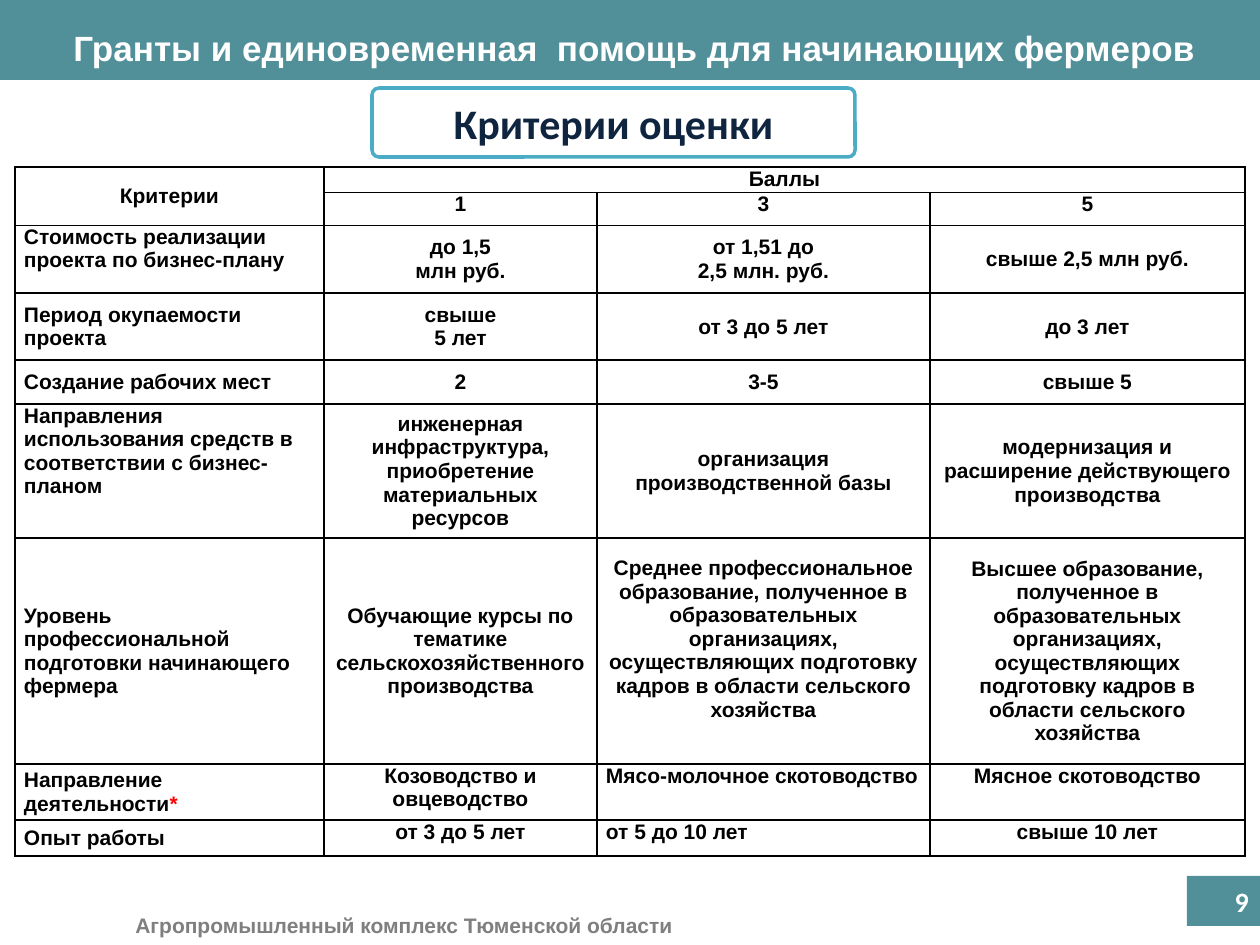
from lxml import etree
from pptx import Presentation
from pptx.dml.color import RGBColor
from pptx.enum.shapes import MSO_SHAPE as SHAPE
from pptx.enum.text import MSO_ANCHOR as ANCHOR, PP_ALIGN as ALIGN
from pptx.oxml import parse_xml
from pptx.oxml.ns import nsdecls
from pptx.util import Emu, Pt

TEAL = RGBColor(0x51, 0x90, 0x99)
AQUA = RGBColor(0x4B, 0xAC, 0xC6)
NAVY = RGBColor(0x0F, 0x24, 0x3E)
GRAY = RGBColor(0x7F, 0x7F, 0x7F)
RED = RGBColor(0xFF, 0, 0)
BLACK = RGBColor(0, 0, 0)
WHITE = RGBColor(0xFF, 0xFF, 0xFF)


def px(*values):
    return [Emu(round(v * 914400 / 126)) for v in values]


def write(p, text, size=12, font="Arial", color=BLACK, align=ALIGN.LEFT):
    p.alignment = align
    r = p.add_run()
    r.text = text
    r.font.size = Pt(size)
    r.font.name = font
    r.font.bold = True
    r.font.color.rgb = color


prs = Presentation()
prs.slide_width, prs.slide_height = px(1260, 945)
s = prs.slides.add_slide(prs.slide_layouts[6])

for box in [(0, 0, 1260, 80), (1187, 876, 73, 50)]:
    sp = s.shapes.add_shape(SHAPE.RECTANGLE, *px(*box))
    sp.shadow.inherit = False
    sp.fill.solid()
    sp.fill.fore_color.rgb = TEAL
    sp.line.fill.background()

sp = s.shapes.add_shape(SHAPE.ROUNDED_RECTANGLE, *px(372, 88, 483, 69))
sp.adjustments[0] = 0.1
sp.shadow.inherit = False
sp.fill.solid()
sp.fill.fore_color.rgb = WHITE
sp.line.color.rgb = AQUA
sp.line.width = Pt(2)
sp.text_frame.vertical_anchor = ANCHOR.MIDDLE
write(sp.text_frame.paragraphs[0], "Критерии оценки", size=24, font="Calibri",
      color=NAVY, align=ALIGN.CENTER)

labels = [
    ((39, 20, 1191, 55), "Гранты и единовременная  помощь для начинающих фермеров",
     True, ANCHOR.TOP, dict(size=20, color=WHITE, align=ALIGN.CENTER)),
    ((123, 906, 568, 38), "Агропромышленный комплекс Тюменской области",
     False, ANCHOR.TOP, dict(color=GRAY)),
    ((968, 876, 293, 50), "9",
     True, ANCHOR.MIDDLE, dict(size=16, font="Calibri", color=WHITE, align=ALIGN.RIGHT)),
]
for box, text, wrap, anchor, style in labels:
    tf = s.shapes.add_textbox(*px(*box)).text_frame
    tf.word_wrap = wrap
    tf.vertical_anchor = anchor
    write(tf.paragraphs[0], text, **style)

rows = [
    ["Критерии", "Баллы", "", ""],
    ["", "1", "3", "5"],
    ["Стоимость реализации проекта по бизнес-плану", "до 1,5\nмлн руб.",
     "от 1,51 до\n2,5 млн. руб.", "свыше 2,5 млн руб."],
    ["Период окупаемости проекта", "свыше\n5 лет", "от 3 до 5 лет", "до 3 лет"],
    ["Создание рабочих мест", "2", "3-5", "свыше 5"],
    ["Направления использования средств в соответствии с бизнес-планом",
     "инженерная инфраструктура, приобретение материальных ресурсов",
     "организация производственной базы",
     "модернизация и расширение действующего\nпроизводства"],
    ["Уровень профессиональной подготовки начинающего фермера",
     "Обучающие курсы по тематике сельскохозяйственного производства",
     "Среднее профессиональное образование, полученное в образовательных организациях, "
     "осуществляющих подготовку кадров в области сельского хозяйства",
     "Высшее образование, полученное в образовательных организациях, "
     "осуществляющих подготовку кадров в области сельского хозяйства"],
    ["Направление деятельности", "Козоводство и овцеводство",
     "Мясо-молочное скотоводство", "Мясное скотоводство"],
    ["Опыт работы", "от 3 до 5 лет", "от 5 до 10 лет", "свыше 10 лет"],
]
widths = [309, 273, 333, 315]
heights = [25, 33, 68, 67, 44, 134, 226, 56, 36]
top_cells = {(2, 0), (5, 0)} | {(i, j) for i in (0, 1, 7, 8) for j in (1, 2, 3)}
left_cells = {(i, 0) for i in range(2, 9)} | {(7, 2), (8, 2)}

table = s.shapes.add_table(len(rows), len(widths),
                           *px(15, 167, sum(widths), sum(heights))).table
table.first_row = table.horz_banding = False
for column, width in zip(table.columns, px(*widths)):
    column.width = width
for row, height in zip(table.rows, px(*heights)):
    row.height = height

for i, row in enumerate(rows):
    for j, text in enumerate(row):
        cell = table.cell(i, j)
        cell.margin_left, cell.margin_right, cell.margin_top, cell.margin_bottom = px(9, 9, 0, 0)
        cell.vertical_anchor = ANCHOR.TOP if (i, j) in top_cells else ANCHOR.MIDDLE
        align = ALIGN.LEFT if (i, j) in left_cells else ALIGN.CENTER
        for side in "LRTB":
            ln = parse_xml(f'<a:ln{side} {nsdecls("a")} w="12700"><a:solidFill>'
                           f'<a:srgbClr val="{BLACK}"/></a:solidFill></a:ln{side}>')
            cell._tc.get_or_add_tcPr().append(ln)
        cell.fill.background()
        tf = cell.text_frame
        for k, line in enumerate(text.split("\n")):
            p = tf.add_paragraph() if k else tf.paragraphs[0]
            write(p, line, align=align)

write(table.cell(7, 0).text_frame.paragraphs[0], "*", color=RED)
table.cell(6, 2).margin_bottom = px(24)[0]
table.cell(0, 0).merge(table.cell(1, 0))
table.cell(0, 1).merge(table.cell(0, 3))

prs.save("out.pptx")
